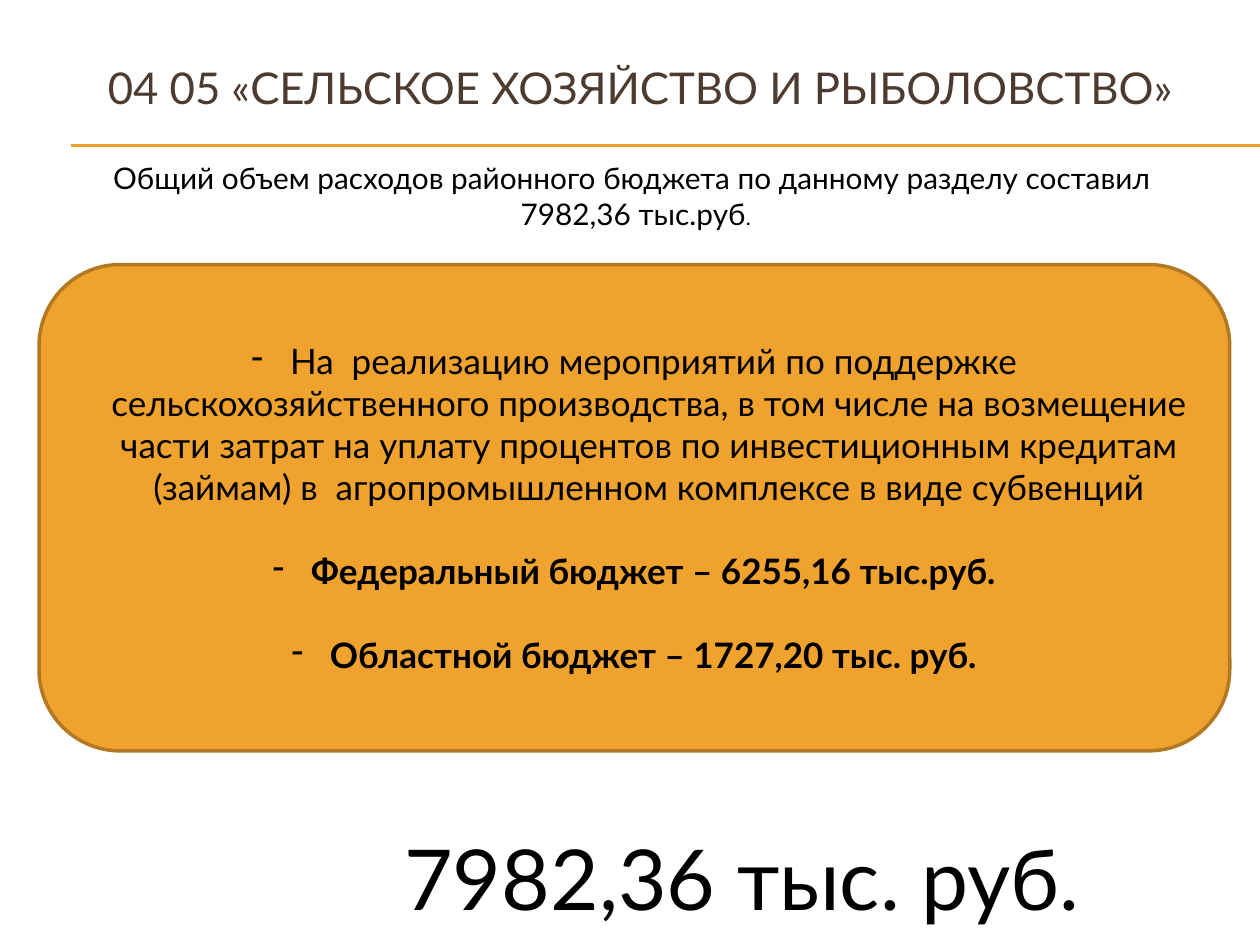
import pptx
import pptx.util
import pptx.dml.color
import pptx.enum.shapes
import pptx.enum.text
import pptx.oxml
import pptx.oxml.ns
import lxml.etree

Pt = pptx.util.Pt
ALIGN = pptx.enum.text.PP_ALIGN
ANCHOR = pptx.enum.text.MSO_ANCHOR
FONT = "Lato"
AMBER, BRONZE, BROWN, BLACK = "F0A22E", "B27822", "4E3B30", "000000"

# Content
TITLE = "04 05 «СЕЛЬСКОЕ ХОЗЯЙСТВО И РЫБОЛОВСТВО»"
SUMMARY = ["Общий объем расходов районного бюджета по данному разделу составил ",
           "7982,36 тыс.руб"]
ITEMS = [  # text, bold
    (" На  реализацию мероприятий по поддержке сельскохозяйственного производства, "
     "в том числе на возмещение части затрат на уплату процентов по инвестиционным "
     "кредитам (займам) в  агропромышленном комплексе в виде субвенций", False),
    (" Федеральный бюджет – 6255,16 тыс.руб.", True),
    (" Областной бюджет – 1727,20 тыс. руб.", True),
]
TOTAL = "7982,36 тыс. руб."
RULE_HEIGHTS = [82.8, 83.5]


def color(value):
    return pptx.dml.color.RGBColor.from_string(value)


def style(para, size, tint=BLACK, align=ALIGN.CENTER, bold=False):
    para.alignment = align
    para.font.name = FONT
    para.font.size = Pt(size)
    para.font.bold = bold
    para.font.color.rgb = color(tint)


def indent(para, margin, first, bullet=None):
    properties = para._p.get_or_add_pPr()
    properties.set("marL", str(Pt(margin)))
    properties.set("indent", str(Pt(first)))
    if bullet:
        mark = lxml.etree.SubElement(properties, pptx.oxml.ns.qn("a:buChar"))
        mark.set("char", bullet)
        # The bullet comes before the default run properties
        defaults = properties.find(pptx.oxml.ns.qn("a:defRPr"))
        if defaults is not None:
            defaults.addprevious(mark)


def add_text(page, place, lines, size, tint=BLACK, align=ALIGN.CENTER, anchor=ANCHOR.MIDDLE):
    frame = page.shapes.add_textbox(*map(Pt, place)).text_frame
    frame.word_wrap = True
    frame.vertical_anchor = anchor
    frame.text = "\n".join(lines)
    for para in frame.paragraphs:
        style(para, size, tint, align)
    return frame


def main():
    deck = pptx.Presentation()
    deck.slide_width, deck.slide_height = Pt(720), Pt(540)
    page = deck.slides.add_slide(deck.slide_layouts[6])

    # Double rule under the title
    for height in RULE_HEIGHTS:
        rule = page.shapes.add_connector(
            pptx.enum.shapes.MSO_CONNECTOR.STRAIGHT, Pt(40.5), Pt(height), Pt(720), Pt(height))
        rule.line.color.rgb = color(AMBER)
        rule.line.width = Pt(0.75)
        lxml.etree.SubElement(rule._element.spPr, pptx.oxml.ns.qn("a:effectLst"))

    # Title
    add_text(page, (23.8, 16.6, 684, 66.2), [TITLE], 25, BROWN)

    # Summary, with a smaller full stop
    summary = add_text(page, (7.2, 94.3, 697.7, 49.7), SUMMARY, 17)
    summary.margin_top, summary.margin_bottom = 0, Pt(14.4)
    for para in summary.paragraphs:
        indent(para, 0, 14.4)
    stop = summary.paragraphs[-1].add_run()
    stop.text = "."
    stop.font.size = Pt(12)

    # Panel with the spending items
    panel = page.shapes.add_shape(
        pptx.enum.shapes.MSO_SHAPE.ROUNDED_RECTANGLE, Pt(22.3), Pt(151.2), Pt(680.4), Pt(277.9))
    panel.shadow.inherit = False
    panel.fill.solid()
    panel.fill.fore_color.rgb = color(AMBER)
    panel.line.color.rgb = color(BRONZE)
    panel.line.width = Pt(2)
    frame = panel.text_frame
    frame.word_wrap = True
    frame.vertical_anchor = ANCHOR.MIDDLE
    frame.text = "\n".join(text for text, bold in ITEMS)
    for number, (para, (text, bold)) in enumerate(zip(frame.paragraphs, ITEMS)):
        style(para, 20, bold=bold)
        para.space_before = Pt(24 if number else 0)
        indent(para, 17, -17, "-")

    # Total
    add_text(page, (223.9, 468.7, 444.2, 52.6), [TOTAL], 48, align=ALIGN.LEFT, anchor=ANCHOR.TOP)

    deck.save("out.pptx")


if __name__ == "__main__":
    main()
